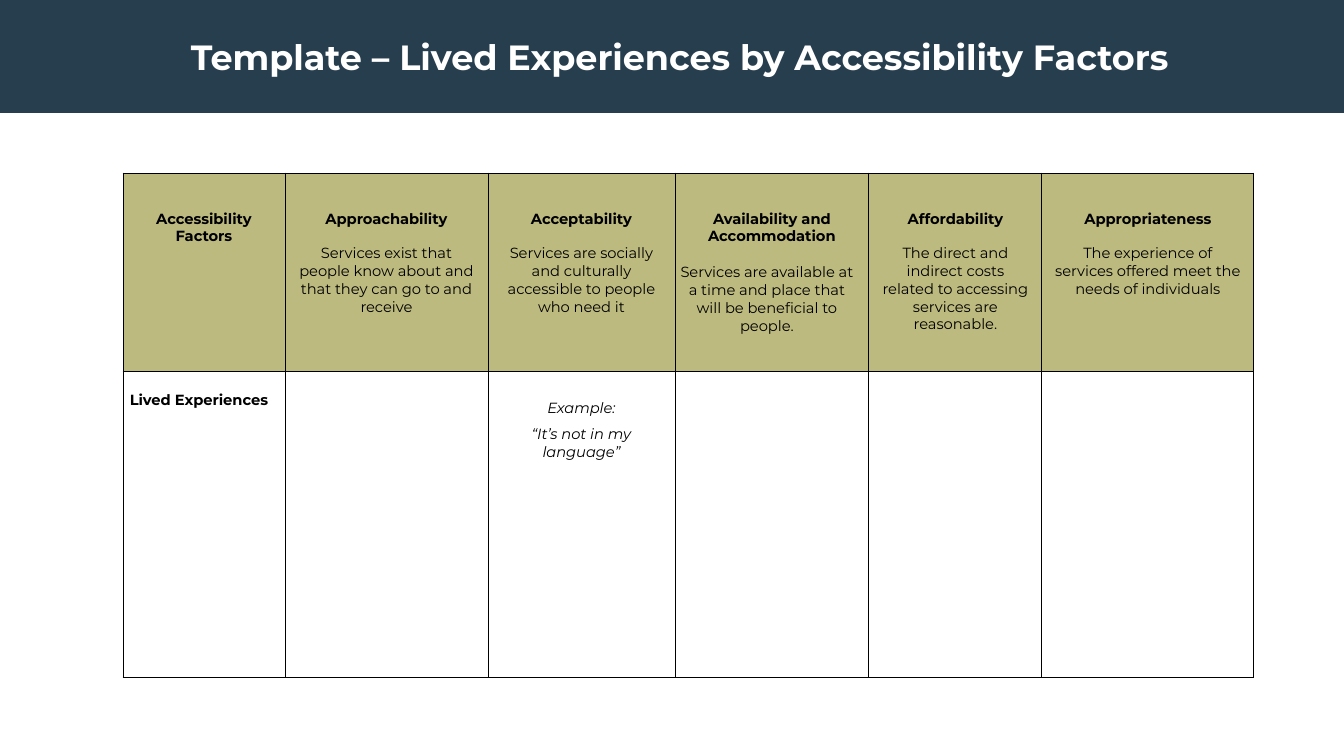
import pptx
import pptx.dml.color
import pptx.enum.shapes
import pptx.enum.text
import pptx.oxml.ns
import pptx.util
from lxml import etree

PX = 9071.43
COLORS = {"navy": "273E4E", "olive": "BCBA7F", "black": "000000", "white": "FFFFFF"}
FACTORS = [
    ("Accessibility Factors", ""),
    ("Approachability", "Services exist that people know about and that they can go to and receive"),
    ("Acceptability", "Services are socially and culturally accessible to people who need it"),
    ("Availability and Accommodation",
     "Services are available at a time and place that will be beneficial to people."),
    ("Affordability", "The direct and indirect costs related to accessing services are reasonable."),
    ("Appropriateness", "The experience of services offered meet the needs of individuals"),
]
UNINDENTED = "Availability and Accommodation"


def px(length):
    return pptx.util.Emu(round(length * PX))


def rgb(name):
    return pptx.dml.color.RGBColor.from_string(COLORS[name])


class SlideBuilder:
    font = "Montserrat"
    body_size = 10.5
    title_size = 25
    border_width = 0.75

    def __init__(self, slide):
        self.slide = slide

    def add_span(self, para, text, size, color, bold=False, italic=False):
        span = para.add_run()
        span.text = text
        span.font.name = self.font
        span.font.size = pptx.util.Pt(size)
        span.font.bold = bold
        span.font.italic = italic
        span.font.color.rgb = rgb(color)

    def add_band(self, left, top, width, height, color):
        band = self.slide.shapes.add_shape(
            pptx.enum.shapes.MSO_SHAPE.RECTANGLE, px(left), px(top), px(width), px(height))
        band.shadow.inherit = False
        band.fill.solid()
        band.fill.fore_color.rgb = rgb(color)
        band.line.fill.background()

    def add_title(self, left, top, width, height, text):
        box = self.slide.shapes.add_textbox(px(left), px(top), px(width), px(height))
        box.text_frame.word_wrap = False
        box.text_frame.auto_size = pptx.enum.text.MSO_AUTO_SIZE.SHAPE_TO_FIT_TEXT
        self.add_span(box.text_frame.paragraphs[0], text, self.title_size, "white", bold=True)

    def add_table(self, left, top, widths, heights):
        frame = self.slide.shapes.add_table(
            len(heights), len(widths), px(left), px(top), px(sum(widths)), px(sum(heights)))
        table = frame.table
        table.first_row = False
        table.horz_banding = False
        for column, width in zip(table.columns, widths):
            column.width = px(width)
        for row, height in zip(table.rows, heights):
            row.height = px(height)
        for cell in table.iter_cells():
            self.style_cell(cell)
        return table

    def style_cell(self, cell):
        cell.margin_left = cell.margin_right = px(3)
        cell.margin_top = cell.margin_bottom = px(2)
        properties = cell._tc.get_or_add_tcPr()
        qn = pptx.oxml.ns.qn
        for side in ("a:lnL", "a:lnR", "a:lnT", "a:lnB"):
            border = etree.SubElement(
                properties, qn(side), w=str(pptx.util.Pt(self.border_width)))
            fill = etree.SubElement(border, qn("a:solidFill"))
            etree.SubElement(fill, qn("a:srgbClr"), val=COLORS["black"])
        cell.fill.background()

    def fill_cell(self, cell, top, right, lines):
        cell.margin_top = px(top)
        cell.margin_right = px(right)
        for index, (text, bold, italic, before, indent) in enumerate(lines):
            frame = cell.text_frame
            para = frame.add_paragraph() if index else frame.paragraphs[0]
            para.alignment = pptx.enum.text.PP_ALIGN.CENTER
            para.space_before = pptx.util.Pt(before)
            para._p.get_or_add_pPr().set("marL", str(px(indent)))
            self.add_span(para, text, self.body_size, "black", bold, italic)


def main():
    deck = pptx.Presentation()
    deck.slide_width = px(1344)
    deck.slide_height = px(756)
    page = SlideBuilder(deck.slides.add_slide(deck.slide_layouts[6]))

    table = page.add_table(123, 173, [162, 203, 187, 194, 173, 212], [198, 307])
    for column, (factor, meaning) in enumerate(FACTORS):
        cell = table.cell(0, column)
        cell.fill.solid()
        cell.fill.fore_color.rgb = rgb("olive")
        lines = [(factor, True, False, 0, 10)]
        if meaning:
            before, indent = (13, 0) if factor == UNINDENTED else (12, 10)
            lines.append((meaning, False, False, before, indent))
        page.fill_cell(cell, 37, 13, lines)
    page.fill_cell(table.cell(1, 0), 20, 13, [("Lived Experiences", True, False, 0, 0)])
    page.fill_cell(table.cell(1, 2), 28, 3, [
        ("Example:", False, True, 0, 0),
        ("“It’s not in my language”", False, True, 6, 0),
    ])

    page.add_band(0, 0, 1344, 113, "navy")
    page.add_title(181, 31, 1001, 52, "Template – Lived Experiences by Accessibility Factors")
    deck.save("out.pptx")


if __name__ == "__main__":
    main()
